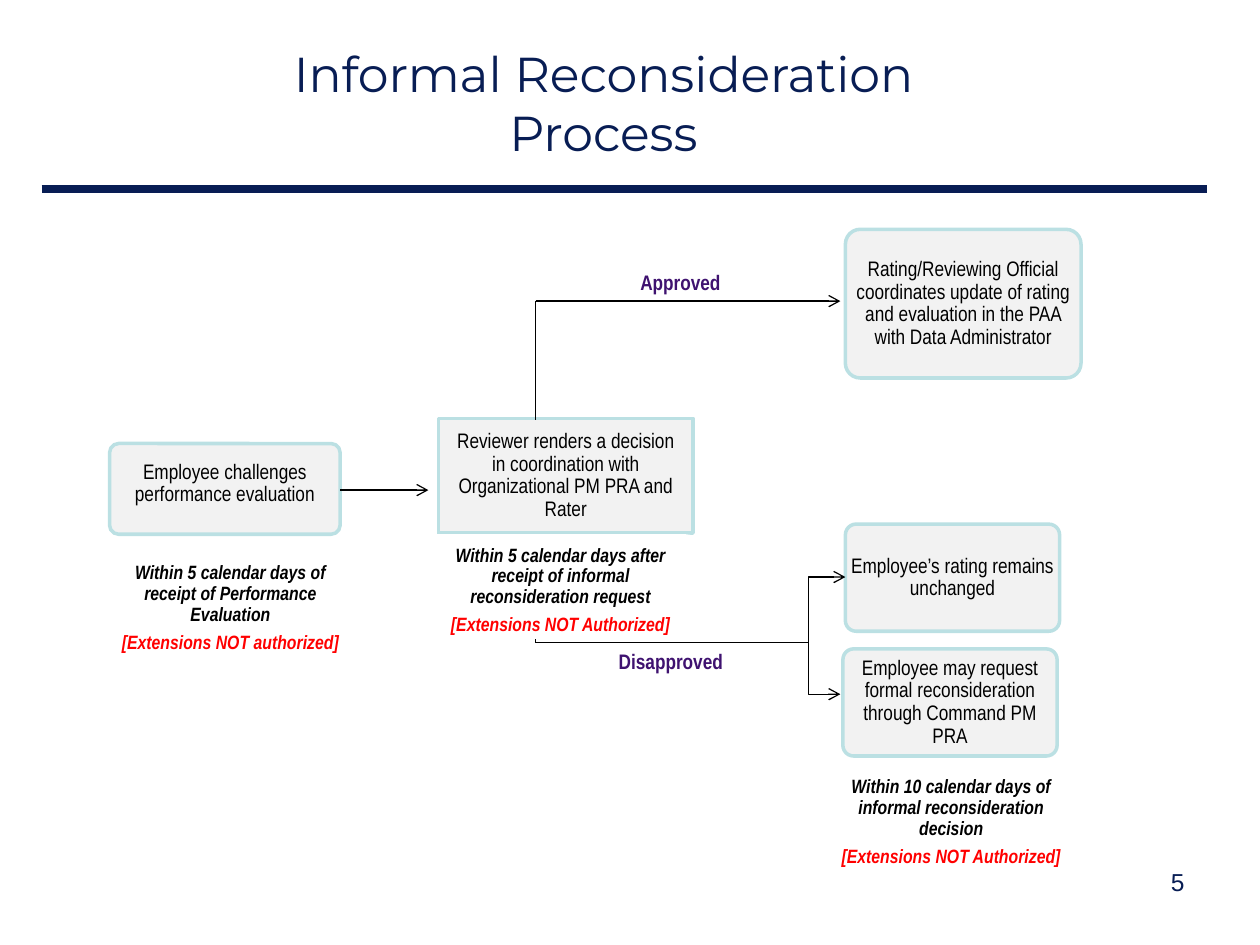
import pptx
import pptx.util
import pptx.dml.color
import pptx.enum.shapes
import pptx.enum.text
import pptx.oxml
import pptx.oxml.ns

Inches, Pt = pptx.util.Inches, pptx.util.Pt
SHAPE = pptx.enum.shapes.MSO_SHAPE
CONNECTOR = pptx.enum.shapes.MSO_CONNECTOR
ALIGN = pptx.enum.text.PP_ALIGN
ANCHOR = pptx.enum.text.MSO_ANCHOR

COLORS = {"navy": "081D54", "black": "000000", "red": "FF0000", "purple": "3F1270",
          "box": "F2F2F2", "border": "BBE0E3", "white": "FFFFFF"}


def rgb(name):
    return pptx.dml.color.RGBColor.from_string(COLORS[name])


def add_xml(parent, tag, **attrs):
    el = pptx.oxml.parse_xml(f"<a:{tag} {pptx.oxml.ns.nsdecls('a')}/>")
    for key, value in attrs.items():
        el.set(key, value)
    parent.append(el)


class FlowSlide:
    font = "Arial Narrow"

    def __init__(self, prs):
        self.s = prs.slides.add_slide(prs.slide_layouts[5])

    def add_text(self, p, text, size, color="black", font=None, bold=False, italic=False,
                 align=ALIGN.CENTER, spacing=None):
        p.alignment = align
        if spacing:
            p.line_spacing = spacing
        for i, line in enumerate(text.split("\n")):
            if i:
                p.add_line_break()
            r = p.add_run()
            r.text = line
            r.font.name, r.font.size = font or self.font, Pt(size)
            r.font.bold, r.font.italic = bold, italic
            r.font.color.rgb = rgb(color)

    def title(self, text, x, y, w, h):
        sp = self.s.shapes.title
        sp.left, sp.top, sp.width, sp.height = map(Inches, (x, y, w, h))
        tf = sp.text_frame
        tf.word_wrap, tf.vertical_anchor = True, ANCHOR.MIDDLE
        self.add_text(tf.paragraphs[0], text, 28, "navy", "Montserrat")

    def label(self, text, x, y, w, h, size=12, **style):
        tf = self.s.shapes.add_textbox(*map(Inches, (x, y, w, h))).text_frame
        tf.word_wrap = True
        self.add_text(tf.paragraphs[0], text, size, **style)

    def rounded(self, x, y, w, h, radius, fill):
        sp = self.s.shapes.add_shape(SHAPE.ROUNDED_RECTANGLE, *map(Inches, (x, y, w, h)))
        sp.adjustments[0] = radius
        sp.shadow.inherit = False
        sp.fill.solid()
        sp.fill.fore_color.rgb = rgb(fill)
        sp.text_frame.word_wrap = True
        return sp

    def step(self, text, x, y, w, h, radius=0.1, bottom=0.01):
        sp = self.rounded(x, y, w, h, radius, "box")
        sp.line.color.rgb, sp.line.width = rgb("border"), Pt(2)
        tf = sp.text_frame
        tf.vertical_anchor = ANCHOR.MIDDLE
        tf.margin_left = tf.margin_right = 0
        tf.margin_top, tf.margin_bottom = Inches(0.01), Inches(bottom)
        self.add_text(tf.paragraphs[0], text, 12, spacing=0.9)

    def deadline(self, text, extension, x, y, w, h):
        sp = self.rounded(x, y, w, h, 0.167, "white")
        sp.line.fill.background()
        tf = sp.text_frame
        tf.vertical_anchor = ANCHOR.TOP
        p = tf.paragraphs[0]
        p.space_after = Pt(4)
        self.add_text(p, text, 11, bold=True, italic=True, spacing=0.9)
        self.add_text(tf.add_paragraph(), extension, 11, "red", bold=True, italic=True,
                      spacing=0.9)

    def line(self, x1, y1, x2, y2, color="black", width=0.75, head=False, tail=False, bend=None):
        kind = CONNECTOR.STRAIGHT if bend is None else CONNECTOR.ELBOW
        c = self.s.shapes.add_connector(kind, *map(Inches, (x1, y1, x2, y2)))
        c.line.color.rgb, c.line.width = rgb(color), Pt(width)
        props = c._element.spPr
        ln = props.find(pptx.oxml.ns.qn("a:ln"))
        if head:
            add_xml(ln, "headEnd", type="arrow")
        if tail:
            add_xml(ln, "tailEnd", type="arrow")
        if bend is not None:
            ratio = round((bend - x1) / (x2 - x1) * 100000)
            guides = props.find(".//" + pptx.oxml.ns.qn("a:avLst"))
            add_xml(guides, "gd", name="adj1", fmla=f"val {ratio}")
        add_xml(props, "effectLst")


def main():
    prs = pptx.Presentation()
    prs.slide_width, prs.slide_height = Inches(10), Inches(7.5)
    flow = FlowSlide(prs)

    # Heading
    flow.line(0.33, 1.5, 9.58, 1.5, "navy", 4.5)
    flow.title("Informal Reconsideration Process", 1.83, 0.2, 5.92, 1.22)

    # Steps
    flow.step("Employee challenges performance evaluation", 0.87, 3.52, 1.83, 0.72, bottom=0.09)
    flow.step("Reviewer renders a decision\nin coordination with\n"
              "Organizational PM PRA and\nRater", 3.48, 3.32, 2.02, 0.91, radius=0)
    flow.step("Rating/Reviewing Official coordinates update of rating and evaluation "
              "in the PAA with Data Administrator", 6.71, 1.82, 1.87, 1.18)
    flow.step("Employee’s rating remains unchanged", 6.71, 4.16, 1.7, 0.85)
    flow.step("Employee may request formal reconsideration\nthrough Command PM\nPRA",
              6.69, 5.15, 1.7, 0.85)

    # Arrows and branches
    flow.line(2.7, 3.89, 3.4, 3.89, tail=True)
    flow.line(4.25, 3.33, 4.25, 2.39)
    flow.line(4.25, 2.39, 6.67, 2.39, tail=True)
    flow.line(4.25, 4.26, 4.25, 5.1)
    flow.line(4.25, 5.1, 6.42, 5.1)
    flow.line(6.71, 4.58, 6.67, 5.51, head=True, tail=True, bend=6.42)
    flow.label("Approved", 4.89, 2.09, 1.02, 0.3, color="purple", bold=True)
    flow.label("Disapproved", 4.76, 5.1, 1.13, 0.3, color="purple", bold=True)

    # Deadlines
    flow.deadline("Within 5 calendar days of receipt of Performance Evaluation",
                  "[Extensions NOT authorized]", 0.8, 4.38, 2.06, 0.81)
    flow.deadline("Within 5 calendar days after receipt of informal reconsideration request",
                  "[Extensions NOT Authorized]", 3.32, 4.24, 2.26, 0.83)
    flow.deadline("Within 10 calendar days of informal reconsideration decision",
                  "[Extensions NOT Authorized]", 6.42, 6.08, 2.26, 0.79)

    # Page number
    flow.label("5", 7.17, 6.83, 2.33, 0.52, size=14, color="navy", font="Arial", align=ALIGN.RIGHT)

    prs.save("out.pptx")


if __name__ == "__main__":
    main()
